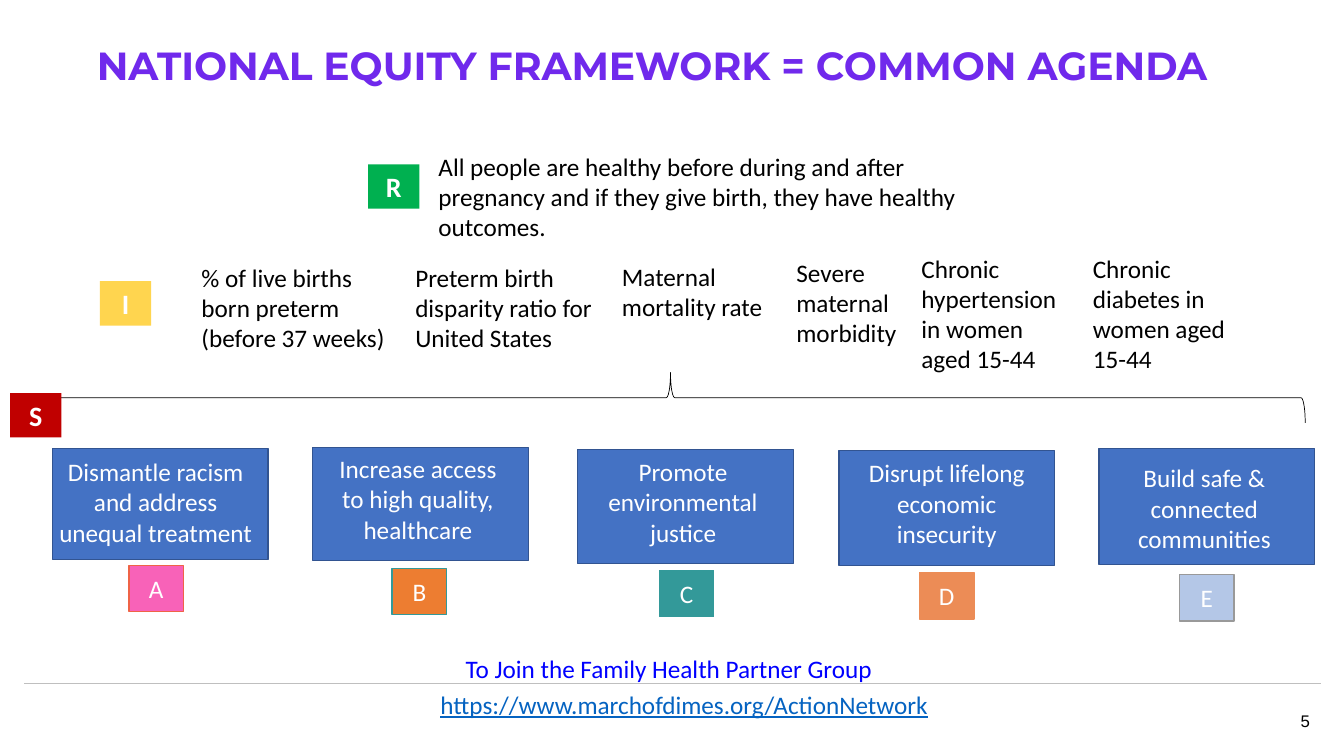
from typing import NamedTuple

from lxml.etree import SubElement
from pptx import Presentation
from pptx.dml.color import RGBColor
from pptx.enum.dml import MSO_LINE
from pptx.enum.shapes import MSO_CONNECTOR, MSO_SHAPE as Kind
from pptx.enum.text import MSO_ANCHOR as Anchor, PP_ALIGN as Align
from pptx.oxml.ns import qn
from pptx.util import Inches, Pt

WHITE, BLACK = "FFFFFF", "000000"
BLUE, NAVY = "4472C4", "325491"


class Box(NamedTuple):
    left: float
    top: float
    width: float
    height: float


class Style(NamedTuple):
    size: int = 18
    color: str = BLACK
    bold: bool = False
    under: bool = False
    font: str = "Calibri"
    align: Align = Align.LEFT
    anchor: Anchor = Anchor.TOP


class Note(NamedTuple):
    text: str
    box: Box
    style: Style = Style()


class Mark(NamedTuple):
    text: str
    left: float
    top: float
    fill: str
    line: str = ""


class Plan(NamedTuple):
    card: Box
    note: Note
    mark: Mark


def paint(target, color: str) -> None:
    """Set a fill or a line fill to a solid hex colour."""
    target.solid()
    target.fore_color.rgb = RGBColor.from_string(color)


def write(shape, text: str, style: Style) -> None:
    frame = shape.text_frame
    frame.word_wrap = True
    frame.vertical_anchor = style.anchor
    para = frame.paragraphs[0]
    para.alignment = style.align
    run = para.add_run()
    run.text = text
    font = run.font
    font.name, font.size = style.font, Pt(style.size)
    font.bold, font.underline = style.bold, style.under
    paint(font.fill, style.color)


def place(box: Box) -> list[int]:
    return [Inches(side) for side in box]


def add_note(shapes, note: Note) -> None:
    write(shapes.add_textbox(*place(note.box)), note.text, note.style)


def add_rect(shapes, box: Box, fill: str, line: str = ""):
    rect = shapes.add_shape(Kind.RECTANGLE, *place(box))
    rect.shadow.inherit = False
    paint(rect.fill, fill)
    if line:
        paint(rect.line.fill, line)
        rect.line.width = Pt(1)
    else:
        rect.line.fill.background()
    return rect


def add_mark(shapes, mark: Mark, width: float, height: float, style: Style) -> None:
    box = Box(mark.left, mark.top, width, height)
    write(add_rect(shapes, box, mark.fill, mark.line), mark.text, style)


def add_rule(shapes, left: float, right: float, top: float) -> None:
    rule = shapes.add_connector(MSO_CONNECTOR.STRAIGHT, Inches(left), Inches(top),
                                Inches(right), Inches(top))
    paint(rule.line.fill, "BFBFBF")
    rule.line.width = Pt(0.25)
    rule.line.dash_style = MSO_LINE.ROUND_DOT
    SubElement(rule._element.spPr, qn("a:effectLst"))


def add_brace(shapes, box: Box) -> None:
    brace = shapes.add_shape(Kind.RIGHT_BRACE, *place(box))
    brace.rotation = 270
    brace.shadow.inherit = False
    brace.fill.background()
    paint(brace.line.fill, BLACK)
    brace.line.width = Pt(0.5)


HEAD = Style(28, "7029EC", bold=True, font="Montserrat")
BADGE = Style(20, WHITE, bold=True, align=Align.CENTER)
CARD = Style(color=WHITE, align=Align.CENTER)
LETTER = CARD._replace(anchor=Anchor.MIDDLE)

BADGES = [
    Mark("R", 3.65, 1.63, "00B050"),
    Mark("I", 0.99, 2.79, "FFD54F"),
    Mark("S", 0.1, 3.9, "C00000"),
]

NOTES = [
    # Result
    Note("All people are healthy before during and after pregnancy and if they "
         "give birth, they have healthy outcomes.", Box(4.25, 1.45, 5.81, 1.01)),
    # Indicators
    Note("% of live births born preterm (before 37 weeks)", Box(1.9, 2.55, 2.12, 1.01)),
    Note("Preterm birth disparity ratio for United States", Box(4.02, 2.55, 2.08, 1.01)),
    Note("Maternal mortality rate", Box(6.07, 2.54, 1.73, 0.71)),
    Note("Severe maternal morbidity", Box(7.8, 2.5, 1.72, 1.01)),
    Note("Chronic hypertension in women aged 15-44", Box(9.04, 2.46, 1.72, 1.31)),
    Note("Chronic diabetes in women aged 15-44", Box(10.74, 2.46, 1.72, 1.31)),
    # Footer
    Note("To Join the Family Health Partner Group", Box(4.52, 6.43, 7.18, 0.4),
         Style(color="0000FF")),
    Note("https://www.marchofdimes.org/ActionNetwork", Box(4.27, 6.79, 5.17, 0.4),
         Style(color="0563C1", under=True)),
    Note("5", Box(11.37, 6.95, 1.72, 0.4),
         Style(12, font="Arial", align=Align.RIGHT, anchor=Anchor.MIDDLE)),
]

PLANS = [
    Plan(Box(0.52, 4.45, 2.14, 1.1),
         Note("Dismantle racism and address unequal treatment",
              Box(0.48, 4.48, 2.13, 1.17), CARD),
         Mark("A", 1.28, 5.61, "F862B8", "EF6347")),
    Plan(Box(3.1, 4.44, 2.14, 1.12),
         Note("Increase access to high quality, healthcare",
              Box(3.15, 4.45, 1.99, 1.19), CARD),
         Mark("B", 3.89, 5.64, "ED7D31", "339999")),
    Plan(Box(5.73, 4.46, 2.14, 1.13),
         Note("Promote environmental justice", Box(5.86, 4.48, 1.83, 1.2), CARD),
         Mark("C", 6.54, 5.66, "339999", "339999")),
    Plan(Box(8.32, 4.47, 2.14, 1.14),
         Note("Disrupt lifelong economic insecurity",
              Box(8.47, 4.49, 1.84, 1.01), CARD),
         Mark("D", 9.12, 5.68, "EC8C56", "EC8C56")),
    Plan(Box(10.9, 4.45, 2.14, 1.15),
         Note("Build safe & connected communities",
              Box(10.95, 4.54, 1.99, 1.01), CARD),
         Mark("E", 11.7, 5.7, "B4C7E7", "999999")),
]


def main() -> None:
    deck = Presentation()
    deck.slide_width, deck.slide_height = Inches(13.33), Inches(7.5)
    slide = deck.slides.add_slide(deck.slide_layouts[5])
    shapes = slide.shapes

    # Title and footer rule
    title = shapes.title
    title.left, title.top, title.width, title.height = place(Box(0.86, 0.41, 12.42, 1.45))
    write(title, "NATIONAL EQUITY FRAMEWORK = COMMON AGENDA", HEAD)
    title.text_frame.paragraphs[0].line_spacing = 0.9
    add_rule(shapes, 0.24, 13.09, 6.78)

    # Brace, badges and texts
    add_brace(shapes, Box(6.4, -2.35, 0.5, 12.59))
    for badge in BADGES:
        add_mark(shapes, badge, 0.51, 0.44, BADGE)
    for note in NOTES:
        add_note(shapes, note)

    # Strategies
    for plan in PLANS:
        add_rect(shapes, plan.card, BLUE, NAVY)
        add_note(shapes, plan.note)
        add_mark(shapes, plan.mark, 0.54, 0.46, LETTER)

    deck.save("out.pptx")


if __name__ == "__main__":
    main()
